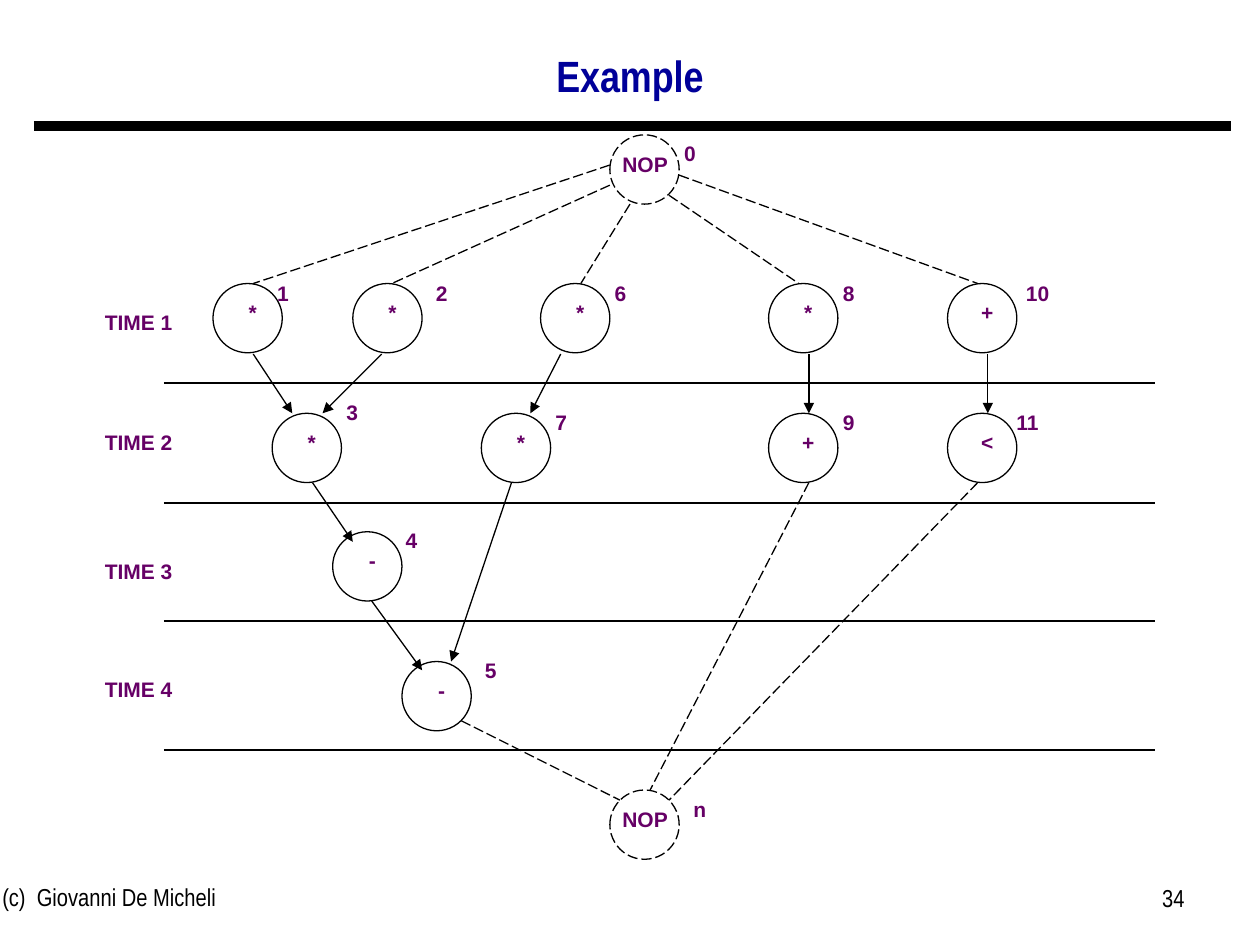
from pptx import Presentation
from pptx.dml.color import RGBColor
from pptx.enum.dml import MSO_LINE_DASH_STYLE as Dash
from pptx.enum.shapes import MSO_CONNECTOR as Connector, MSO_SHAPE as Shape
from pptx.enum.text import MSO_ANCHOR as Anchor, PP_ALIGN as Align
from pptx.oxml.ns import qn
from pptx.util import Pt
from lxml.etree import SubElement

PX = 9144  # EMU per px, 100 px to the inch

THEME = {
    "ink": RGBColor(0x00, 0x00, 0x00),
    "title": RGBColor(0x00, 0x00, 0x99),
    "label": RGBColor(0x66, 0x00, 0x66),
    "label_style": ("Arial", 12, True),
    "title_style": ("Arial Narrow", 25, True),
    "footer_style": ("Arial Narrow", 14, False),
}


def add_text(shapes, text, left, top, width, height=30, style="label_style",
             color="label", align=Align.CENTER):
    box = shapes.add_textbox(left * PX, top * PX, width * PX, height * PX)
    box.text_frame.word_wrap = True
    para = box.text_frame.paragraphs[0]
    para.text = text
    para.alignment = align
    font = para.runs[0].font
    font.name, size, font.bold = THEME[style]
    font.size = Pt(size)
    font.color.rgb = THEME[color]
    return box


def add_line(shapes, start, end, width=0.75, dashed=False, arrow=False):
    x1, y1, x2, y2 = (value * PX for value in (*start, *end))
    line = shapes.add_connector(Connector.STRAIGHT, x1, y1, x2, y2)
    line.line.color.rgb = THEME["ink"]
    line.line.width = Pt(width)
    if dashed:
        line.line.dash_style = Dash.LONG_DASH
    if arrow:
        SubElement(line.line._get_or_add_ln(), qn("a:tailEnd"), type="triangle")
    SubElement(line._element.spPr, qn("a:effectLst"))


deck = Presentation()
deck.slide_width, deck.slide_height = 1000 * PX, 750 * PX
page = deck.slides.add_slide(deck.slide_layouts[6])

# Heading rule, footer and title
add_line(page.shapes, (27, 100), (977, 100), width=6)
add_text(page.shapes, "(c)  Giovanni De Micheli", -8, 695, 317, 52,
         "footer_style", "ink", Align.LEFT)
add_text(page.shapes, "34", 717, 696, 233, 52, "footer_style", "ink", Align.RIGHT)
title = add_text(page.shapes, "Example", 75, 0, 850, 125, "title_style", "title")
title.text_frame.vertical_anchor = Anchor.MIDDLE
title.text_frame.paragraphs[0].line_spacing = 0.9

# Operation nodes: number, operation, circle left and top, number left and top
nodes = [
    ("0", "NOP", 484, 107, 508, 107),
    ("1", "*", 169, 225, 185, 218),
    ("2", "*", 280, 225, 311, 218),
    ("3", "*", 216, 328, 240, 312),
    ("4", "-", 264, 422, 287, 414),
    ("5", "-", 319, 525, 350, 517),
    ("6", "*", 429, 225, 453, 218),
    ("7", "*", 382, 328, 406, 320),
    ("8", "*", 610, 225, 634, 218),
    ("9", "+", 610, 328, 634, 320),
    ("10", "+", 752, 225, 784, 218),
    ("11", "<", 752, 328, 776, 320),
    ("n", "NOP", 484, 627, 516, 627),
]
for number, operation, left, top, number_left, number_top in nodes:
    node = page.shapes.add_group_shape()
    circle = node.shapes.add_shape(Shape.OVAL, left * PX, top * PX, 55 * PX, 55 * PX)
    circle.shadow.inherit = False
    circle.fill.background()
    circle.line.color.rgb = THEME["ink"]
    circle.line.width = Pt(0.75)
    if operation == "NOP":
        circle.line.dash_style = Dash.LONG_DASH
        add_text(node.shapes, operation, left - 23, top + 8, 102)
    else:
        add_text(node.shapes, operation, left, top + 8, 63)
    add_text(page.shapes, number, number_left, number_top, 79)

# Dashed links to the source and sink nodes
for start, end in [
    ((484, 131), (201, 225)), ((484, 147), (311, 225)), ((500, 162), (461, 225)),
    ((531, 155), (634, 225)), ((539, 139), (776, 225)),
    ((366, 572), (492, 635)), ((642, 383), (516, 627)), ((776, 383), (531, 635)),
]:
    add_line(page.shapes, start, end, dashed=True)

# Arrows between dependent operations
for start, end in [
    ((201, 281), (232, 328)), ((303, 281), (256, 328)), ((445, 281), (421, 328)),
    ((642, 281), (642, 328)), ((784, 281), (784, 328)),
    ((248, 383), (280, 430)), ((295, 477), (335, 532)), ((406, 383), (358, 525)),
]:
    add_line(page.shapes, start, end, arrow=True)

# Time steps: a label and the line that closes each step
steps = page.shapes.add_group_shape()
for step, (label_top, line_y) in enumerate(
        [(241, 304), (336, 399), (438, 493), (532, 595)], start=1):
    add_line(steps.shapes, (130, line_y), (917, line_y), width=1)
    add_text(steps.shapes, f"TIME {step}", 51, label_top, 118)

deck.save("out.pptx")
